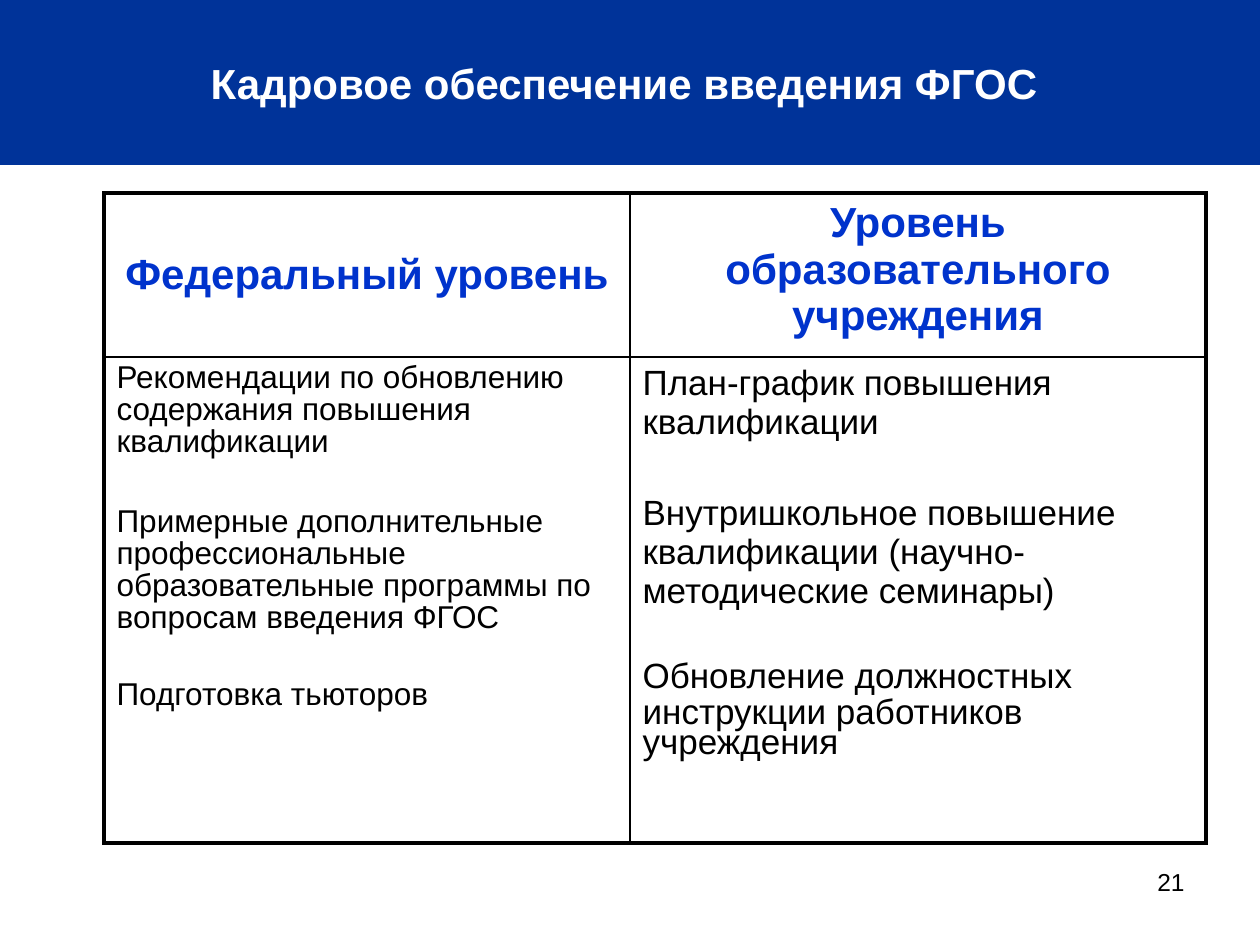
from dataclasses import dataclass
from itertools import product

from lxml import etree
from pptx import Presentation
from pptx import util as u
from pptx.dml.color import RGBColor
from pptx.enum import shapes, text
from pptx.oxml.ns import qn

SCALE = u.Inches(1) / 126
COLORS = {"band": "003399", "heading": "0033CC", "white": "FFFFFF", "black": "000000"}
OUTER, INNER = 2.25, 1
COLUMNS, ROWS = (526, 576), (164, 486)
ALIGN, ANCHOR = text.PP_ALIGN, text.MSO_ANCHOR


@dataclass(frozen=True)
class Run:
    words: str
    size: int
    color: str = "black"
    bold: bool = False


@dataclass(frozen=True)
class Para:
    runs: tuple[Run, ...]
    align: ALIGN = ALIGN.LEFT
    before: int = 0
    spacing: float = 1.0


def px(length: int) -> u.Emu:
    return u.Emu(round(length * SCALE))


def rgb(name: str) -> RGBColor:
    return RGBColor.from_string(COLORS[name])


def write(frame, paras: list[Para]) -> None:
    for index, para in enumerate(paras):
        line = frame.add_paragraph() if index else frame.paragraphs[0]
        layout = {"alignment": para.align, "space_before": u.Pt(para.before),
                  "line_spacing": para.spacing}
        for name, value in layout.items():
            setattr(line, name, value)
        for part in para.runs:
            run = line.add_run()
            run.text = part.words
            style = {"name": "Arial", "size": u.Pt(part.size), "bold": part.bold}
            for name, value in style.items():
                setattr(run.font, name, value)
            run.font.color.rgb = rgb(part.color)


def set_borders(cell, widths: dict[str, float]) -> None:
    """Give each side (L, R, T, B) a solid black line, width in points."""
    properties = cell._tc.get_or_add_tcPr()
    for side, width in widths.items():
        line = etree.SubElement(properties, qn(f"a:ln{side}"), w=str(u.Pt(width)))
        fill = etree.SubElement(line, qn("a:solidFill"))
        etree.SubElement(fill, qn("a:srgbClr"), val=COLORS["black"])


def heading(words: str) -> list[Para]:
    return [Para((Run(words, 24, "heading", True),), ALIGN.CENTER)]


FEDERAL = [
    Para((Run("Рекомендации по обновлению содержания повышения квалификации", 18),),
         spacing=0.9),
    Para((Run("Примерные дополнительные профессиональные образовательные программы "
              "по вопросам введения ФГОС", 18),), before=28, spacing=0.9),
    Para((Run("Подготовка тьюторов", 18),), before=26, spacing=0.9),
]
SCHOOL = [
    Para((Run("План-график повышения квалификации", 20),)),
    Para((Run("Внутришкольное повышение квалификации (научно-методические семинары)", 20),),
         before=30),
    Para((Run("Обновление должностных инструкции работников", 20), Run(" ", 28),
          Run("учреждения", 20)), before=32, spacing=0.7),
]
CELLS = [
    [heading("Федеральный уровень"), heading("Уровень образовательного учреждения")],
    [FEDERAL, SCHOOL],
]


def add_title(slide) -> None:
    band = slide.shapes.add_shape(shapes.MSO_SHAPE.RECTANGLE, 0, 0, px(1260), px(165))
    band.shadow.inherit = False
    band.fill.solid()
    band.fill.fore_color.rgb = rgb("band")
    band.line.fill.background()
    band.text_frame.word_wrap = False
    band.text_frame.vertical_anchor = ANCHOR.MIDDLE
    title = Run("Кадровое обеспечение введения ФГОС ", 24, "white", True)
    write(band.text_frame, [Para((title,), ALIGN.CENTER)])


def add_levels(slide) -> None:
    table = slide.shapes.add_table(len(ROWS), len(COLUMNS), px(104), px(193),
                                   px(sum(COLUMNS)), px(sum(ROWS))).table
    table.first_row = table.horz_banding = False
    for column, width in zip(table.columns, COLUMNS):
        column.width = px(width)
    for row, height in zip(table.rows, ROWS):
        row.height = px(height)
    for r, c in product(range(len(ROWS)), range(len(COLUMNS))):
        cell = table.cell(r, c)
        set_borders(cell, {"L": INNER if c else OUTER, "R": OUTER if c else INNER,
                           "T": INNER if r else OUTER, "B": OUTER if r else INNER})
        cell.fill.background()
        cell.vertical_anchor = ANCHOR.TOP if r or c else ANCHOR.MIDDLE
        write(cell.text_frame, CELLS[r][c])


def add_page_number(slide) -> None:
    frame = slide.shapes.add_textbox(px(903), px(861), px(294), px(66)).text_frame
    frame.word_wrap = True
    write(frame, [Para((Run("21", 14),), ALIGN.RIGHT)])


def main() -> None:
    deck = Presentation()
    deck.slide_width, deck.slide_height = px(1260), px(945)
    slide = deck.slides.add_slide(deck.slide_layouts[6])
    add_page_number(slide)
    add_title(slide)
    add_levels(slide)
    deck.save("out.pptx")


if __name__ == "__main__":
    main()
